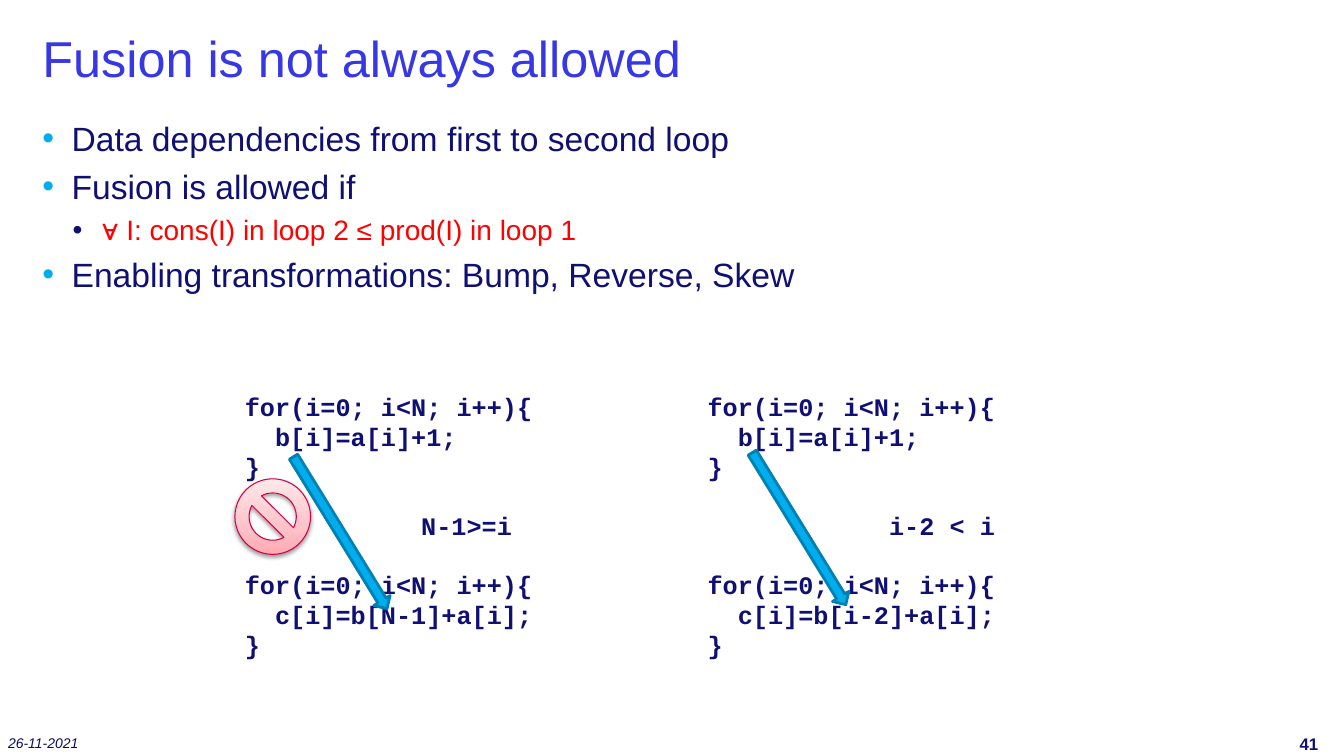
"""Build a slide on when loop fusion is allowed."""
from lxml import etree
from pptx import Presentation
from pptx.dml.color import RGBColor
from pptx.enum.shapes import MSO_SHAPE
from pptx.enum.text import MSO_ANCHOR
from pptx.oxml import parse_xml
from pptx.oxml.ns import qn
from pptx.util import Pt

ARROW, NO_SIGN = MSO_SHAPE.RIGHT_ARROW, MSO_SHAPE.NO_SYMBOL
TOP, MIDDLE = MSO_ANCHOR.TOP, MSO_ANCHOR.MIDDLE
PX = 9144
DRAWING_NS = "http://schemas.openxmlformats.org/drawingml/2006/main"

TITLE = "Fusion is not always allowed"
BULLETS = [
    (0, "Data dependencies from first to second loop"),
    (0, "Fusion is allowed if"),
    (1, "∀ I: cons(I) in loop 2 ≤ prod(I) in loop 1"),
    (0, "Enabling transformations: Bump, Reverse, Skew"),
]
DATE, PAGE_NUMBER = "26-11-2021", "41"
EXAMPLES = [
    {"left": 233, "condition": "N-1>=i", "condition_indent": 175,
     "read": "N-1", "arrow": (249, 519)},
    {"left": 692, "condition": "i-2 < i", "condition_indent": 180,
     "read": "i-2", "arrow": (704, 515)},
]


class Theme:
    """Colours, fonts and type sizes of the slide."""
    title, text, date = "3737E3", "101073", "0C0C61"
    rule, accent, accent_line = "FF0000", "00AEEF", "0081B1"
    ban_line = "D10048"
    ban_stops = [(0, "FFA9B2"), (35, "FFC2C8"), (100, "FFE8EA")]
    sans, mono = "Arial", "Courier New"
    title_size, code_size, number_size, date_size = 36, 18, 12, 10
    bullet_sizes = [24, 20]
    bullet_gaps = [5.5, 4.6]
    code_gap = 20.4


def rgb(value):
    """Return a colour from its hex code."""
    return RGBColor.from_string(value)


def style(para, size, color, face=Theme.sans, bold=False, italic=False):
    """Format every run of a paragraph."""
    for span in para.runs:
        font = span.font
        font.name, font.size, font.color.rgb = face, Pt(size), rgb(color)
        font.bold, font.italic = bold, italic


def add_text(page, rect, lines, inset=(0, 0), anchor=TOP):
    """Add a text box and return its paragraphs."""
    frame = page.shapes.add_textbox(*[n * PX for n in rect]).text_frame
    frame.word_wrap = True
    frame.vertical_anchor = anchor
    frame.margin_left = frame.margin_right = inset[0] * PX
    frame.margin_top = frame.margin_bottom = inset[1] * PX
    frame.text = "\n".join(lines)
    return frame.paragraphs


def indent(para, left, hanging=0):
    """Set the left margin and hanging indent of a paragraph."""
    props = para._p.get_or_add_pPr()
    props.set("marL", str(left * PX))
    props.set("indent", str(-hanging * PX))
    return props


def add_bullets(page):
    """Add the bulleted list."""
    paras = add_text(page, (42, 117, 1258, 592), [text for _, text in BULLETS])
    for para, (level, _) in zip(paras, BULLETS):
        style(para, Theme.bullet_sizes[level], (Theme.text, Theme.rule)[level])
        para.level = level
        para.space_before = Pt(Theme.bullet_gaps[level])
        props = indent(para, 29 + 30 * level, 29)
        color = etree.SubElement(props, qn("a:buClr"))
        etree.SubElement(color, qn("a:srgbClr"),
                         val=(Theme.accent, Theme.text)[level])
        etree.SubElement(props, qn("a:buFont"), typeface=Theme.sans)
        etree.SubElement(props, qn("a:buChar"), char="•")


def add_code(page, example):
    """Add two loops with the condition between them."""
    loop = "for(i=0; i<N; i++){"
    rows = [
        (loop, 0, 0), ("b[i]=a[i]+1;", 30, 0), ("}", 0, 0),
        (example["condition"], example["condition_indent"], Theme.code_gap),
        (loop, 0, Theme.code_gap),
        (f"c[i]=b[{example['read']}]+a[i];", 30, 0), ("}", 0, 0),
    ]
    paras = add_text(page, (example["left"], 383, 310, 283),
                     [row[0] for row in rows], (10, 5))
    for para, (_, left, gap) in zip(paras, rows):
        style(para, Theme.code_size, Theme.text, Theme.mono, bold=True)
        indent(para, left)
        para.space_before = Pt(gap)


def add_shape(page, kind, rect, line, width):
    """Add an outlined preset shape without a shadow."""
    shape = page.shapes.add_shape(kind, *[n * PX for n in rect])
    shape.shadow.inherit = False
    shape.line.color.rgb = rgb(line)
    shape.line.width = Pt(width)
    return shape


def add_arrow(page, position):
    """Add a slanted arrow for a data dependency."""
    arrow = add_shape(page, ARROW, (*position, 177, 19), Theme.accent_line, 2)
    arrow.fill.solid()
    arrow.fill.fore_color.rgb = rgb(Theme.accent)
    arrow.rotation = 58.4


def add_ban(page):
    """Add the prohibition sign with its gradient and soft shadow."""
    sign = add_shape(page, NO_SIGN, (233, 475, 75, 75), Theme.ban_line, 0.75)
    stops = "".join(
        f'<a:gs pos="{place * 1000}"><a:srgbClr val="{color}"/></a:gs>'
        for place, color in Theme.ban_stops)
    props = sign._element.spPr
    props.find(qn("a:prstGeom")).addnext(parse_xml(
        f'<a:gradFill xmlns:a="{DRAWING_NS}" rotWithShape="1"><a:gsLst>{stops}'
        '</a:gsLst><a:lin ang="16200000" scaled="0"/></a:gradFill>'))
    props.find(qn("a:effectLst")).append(parse_xml(
        f'<a:outerShdw xmlns:a="{DRAWING_NS}" blurRad="40000" dist="20000" '
        'dir="5400000" rotWithShape="0"><a:srgbClr val="000000">'
        '<a:alpha val="38000"/></a:srgbClr></a:outerShdw>'))


def main():
    """Assemble and save the slide."""
    deck = Presentation()
    deck.slide_width, deck.slide_height = 1333 * PX, 750 * PX
    page = deck.slides.add_slide(deck.slide_layouts[6])
    title = add_text(page, (42, 8, 1258, 98), [TITLE], anchor=MIDDLE)
    style(title[0], Theme.title_size, Theme.title)
    add_bullets(page)
    number = add_text(page, (1289, 725, 44, 25), [PAGE_NUMBER], anchor=MIDDLE)
    style(number[0], Theme.number_size, Theme.text, bold=True)
    date = add_text(page, (8, 724, 156, 25), [DATE], anchor=MIDDLE)
    style(date[0], Theme.date_size, Theme.date, italic=True)
    for example in EXAMPLES:
        add_code(page, example)
        add_arrow(page, example["arrow"])
    add_ban(page)
    deck.save("out.pptx")


if __name__ == "__main__":
    main()
